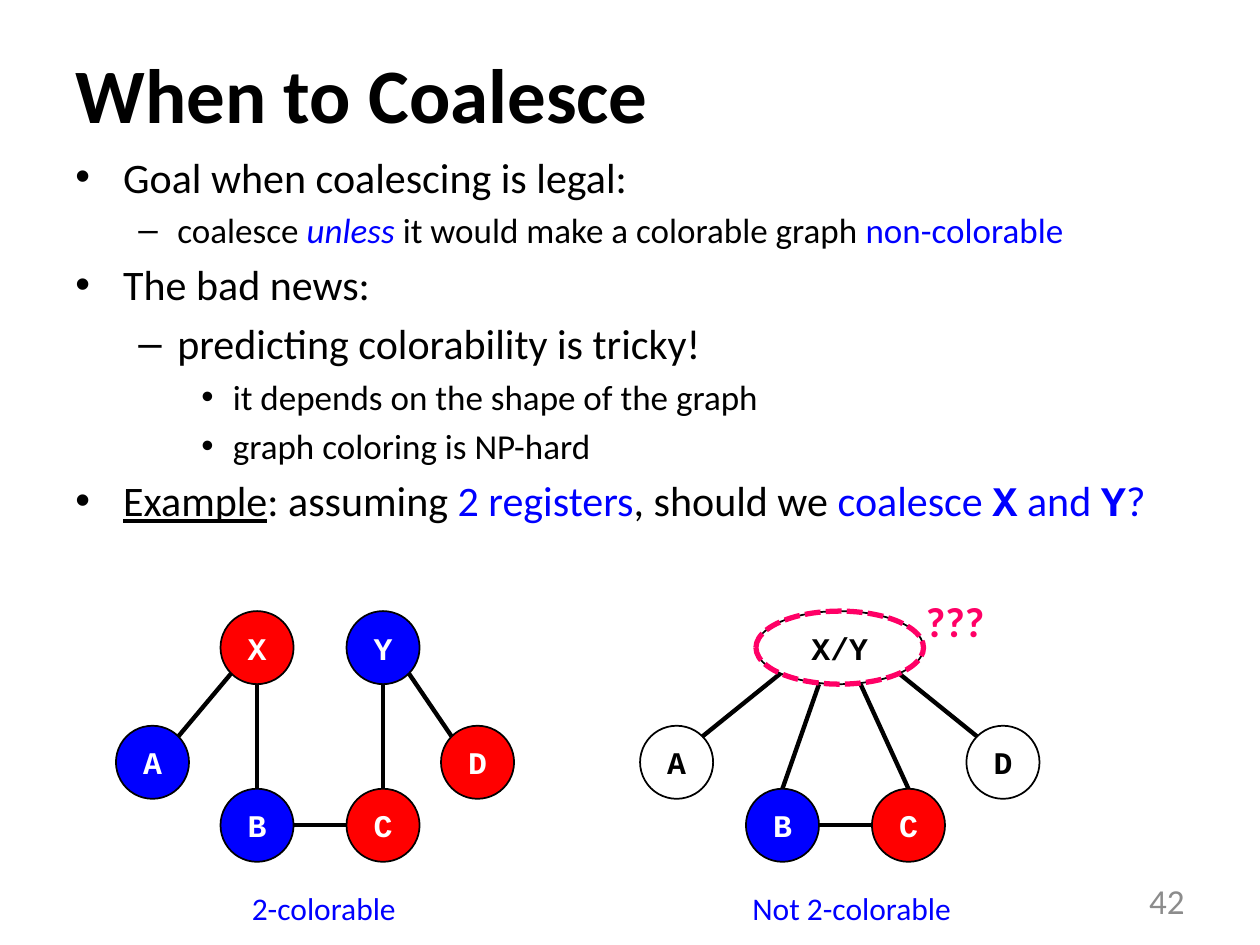
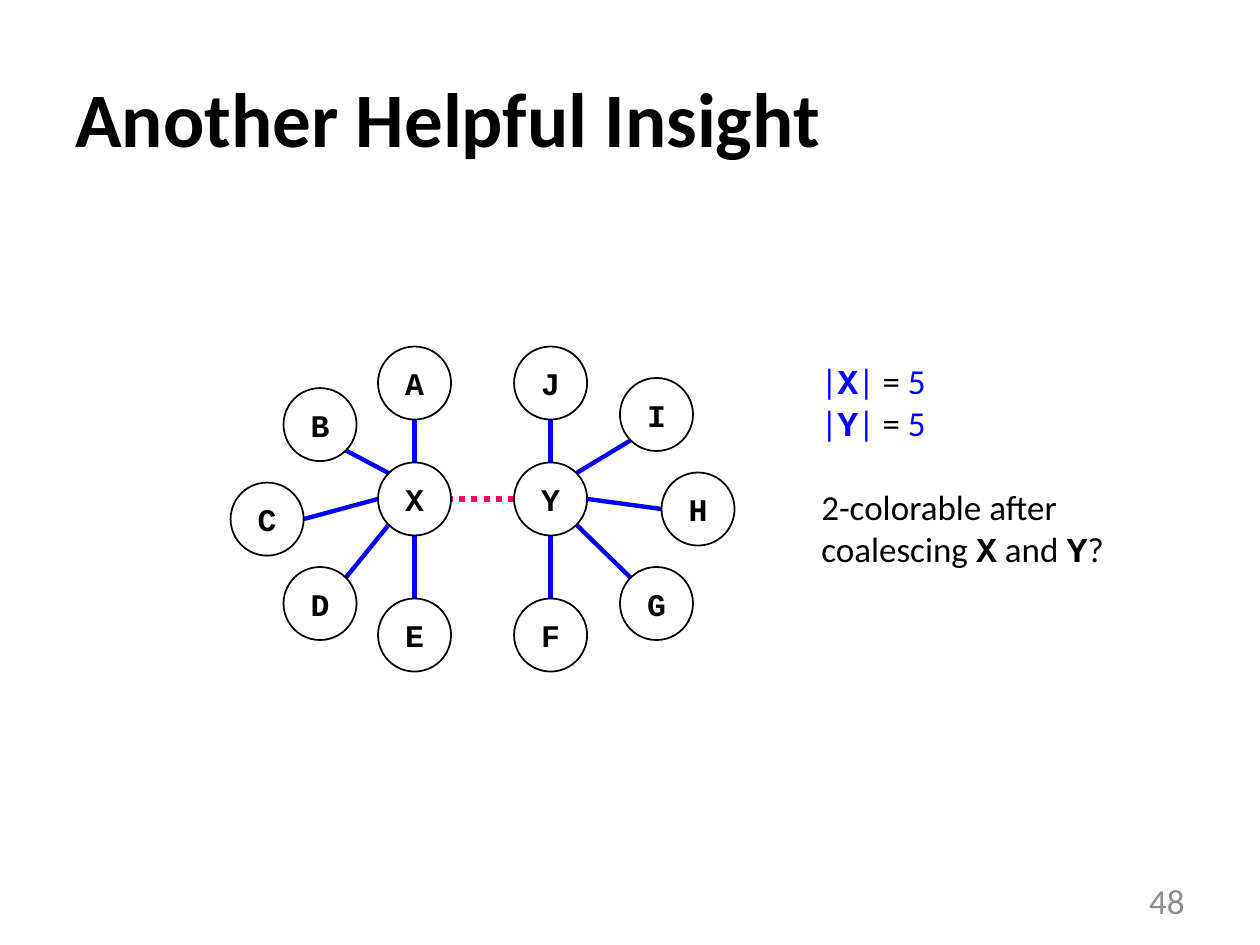
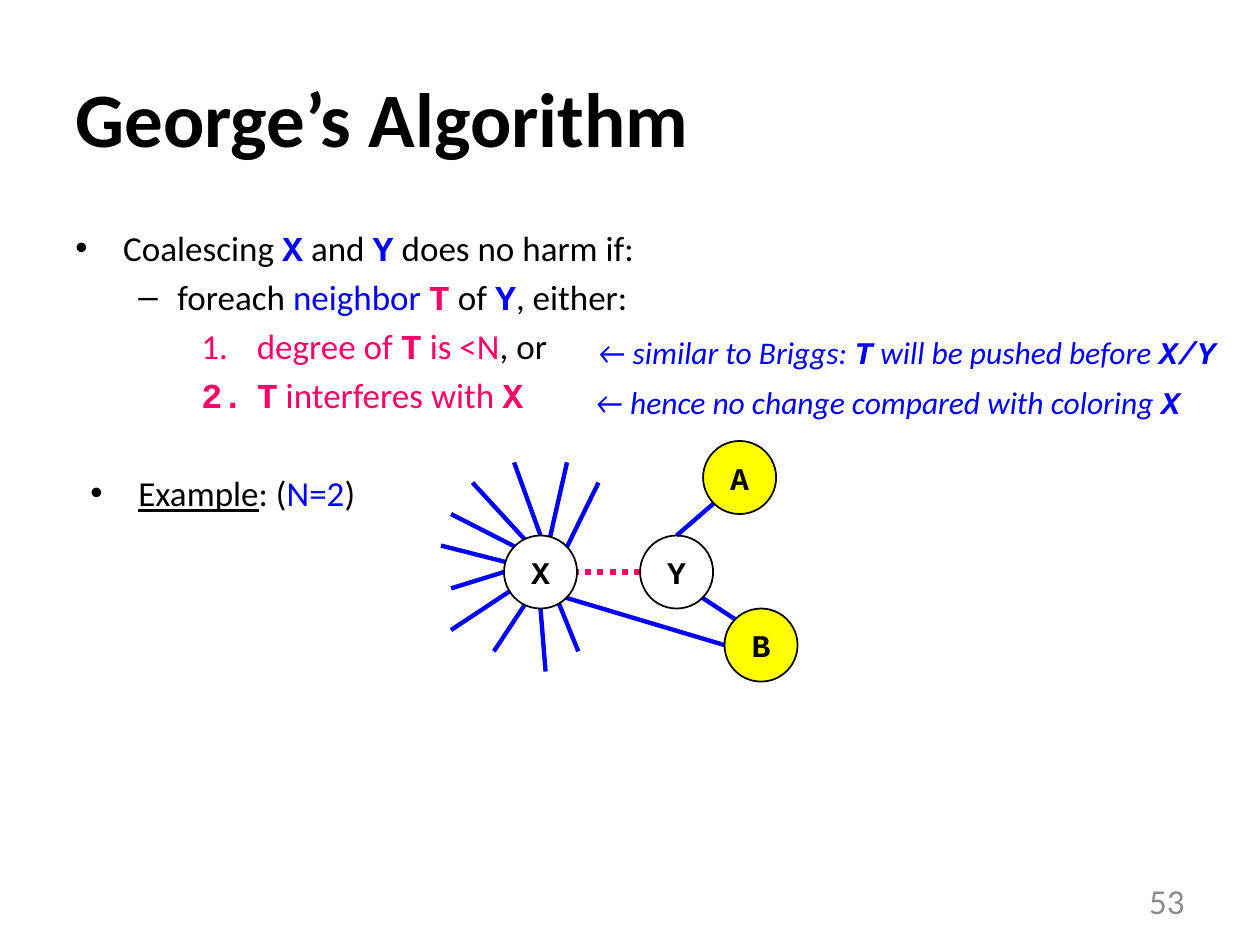
from typing import NamedTuple, Optional

from lxml.etree import SubElement
from pptx import Presentation
from pptx.dml.color import RGBColor
from pptx.enum.dml import MSO_LINE
from pptx.enum.shapes import MSO_CONNECTOR, MSO_SHAPE
from pptx.enum.text import MSO_ANCHOR, MSO_AUTO_SIZE, PP_ALIGN
from pptx.oxml.ns import qn
from pptx.slide import Slide
from pptx.util import Inches, Pt

BLACK = RGBColor(0x00, 0x00, 0x00)
WHITE = RGBColor(0xFF, 0xFF, 0xFF)
BLUE = RGBColor(0x00, 0x00, 0xFF)
RED = RGBColor(0xFF, 0x00, 0x00)
PINK = RGBColor(0xFF, 0x00, 0x66)
YELLOW = RGBColor(0xFF, 0xFF, 0x00)
GRAY = RGBColor(0x8C, 0x8C, 0x8C)
SANS = "Calibri"
MONO = "Courier New"
SIZE = 0.58
DIAG = 0.707
SITES = {
    "n": (0, -1), "s": (0, 1), "w": (-1, 0), "e": (1, 0),
    "nw": (-DIAG, -DIAG), "ne": (DIAG, -DIAG),
    "sw": (-DIAG, DIAG), "se": (DIAG, DIAG),
}
Point = tuple[float, float]


class Run(NamedTuple):
    text: str
    ink: RGBColor = BLACK
    style: str = ""
    font: str = SANS


class Mark(NamedTuple):
    level: int
    left: float
    hang: float
    sign: str


class Para(NamedTuple):
    runs: list[Run]
    size: int = 20
    mark: Optional[Mark] = None
    gap: float = 0
    align: PP_ALIGN = PP_ALIGN.LEFT


class Box(NamedTuple):
    left: float
    top: float
    width: float
    height: float
    wrap: bool = True
    anchor: MSO_ANCHOR = MSO_ANCHOR.TOP


class Node(NamedTuple):
    name: str
    left: float
    top: float
    fill: Optional[RGBColor] = None
    ink: RGBColor = BLACK
    width: float = SIZE

    def site(self, side: str) -> Point:
        across, down = SITES[side]
        half = self.width / 2
        return self.left + half * (1 + across), self.top + SIZE / 2 * (1 + down)


class Pen(NamedTuple):
    ink: RGBColor
    width: float
    dash: Optional[MSO_LINE] = None


DOT = Mark(0, 0.38, 0.38, "•")
DASH = Mark(1, 0.81, 0.31, "–")
SUB = Mark(2, 1.25, 0.25, "•")
STEP = Mark(2, 1.44, 0.44, "")
INSET = Mark(0, 0.5, 0.38, "•")
THIN = Pen(BLACK, 1)
EDGE = Pen(BLACK, 2.5)
LINK = Pen(BLUE, 2.5)
MOVE = Pen(PINK, 3.5, MSO_LINE.ROUND_DOT)
MERGE = Pen(PINK, 3, MSO_LINE.SQUARE_DOT)


def code(text: str, ink: RGBColor = BLACK, style: str = "b") -> Run:
    return Run(text, ink, style, MONO)


def item(mark: Mark, size: int, *runs: Run, gap: float = 0) -> Para:
    return Para(list(runs), size, mark, gap + size / 5)


def fill_frame(frame, paras: list[Para]) -> None:
    for num, para in enumerate(paras):
        line = frame.add_paragraph() if num else frame.paragraphs[0]
        line.alignment = para.align
        line.space_before = Pt(para.gap)
        for part in para.runs:
            run = line.add_run()
            run.text = part.text
            font = run.font
            font.name, font.size = part.font, Pt(para.size)
            font.color.rgb = part.ink
            font.bold = "b" in part.style
            font.italic = "i" in part.style
            font.underline = "u" in part.style
        if para.mark:
            mark = para.mark
            line.level = mark.level
            props = line._p.get_or_add_pPr()
            props.set("marL", str(Inches(mark.left)))
            props.set("indent", str(-Inches(mark.hang)))
            if mark.sign:
                SubElement(props, qn("a:buFont")).set("typeface", "Arial")
                SubElement(props, qn("a:buChar")).set("char", mark.sign)
            else:
                SubElement(props, qn("a:buAutoNum")).set("type", "arabicPeriod")


def add_text(slide: Slide, box: Box, *paras: Para) -> None:
    shape = slide.shapes.add_textbox(*map(Inches, box[:4]))
    frame = shape.text_frame
    frame.word_wrap = box.wrap
    frame.vertical_anchor = box.anchor
    if not box.wrap:
        frame.auto_size = MSO_AUTO_SIZE.SHAPE_TO_FIT_TEXT
    fill_frame(frame, list(paras))


def set_pen(line, pen: Pen) -> None:
    line.color.rgb = pen.ink
    line.width = Pt(pen.width)
    if pen.dash:
        line.dash_style = pen.dash


def add_line(slide: Slide, start: Point, end: Point, pen: Pen) -> None:
    line = slide.shapes.add_connector(
        MSO_CONNECTOR.STRAIGHT, *map(Inches, start + end))
    set_pen(line.line, pen)
    SubElement(line._element.spPr, qn("a:effectLst"))


def add_node(slide: Slide, node: Node, pen: Pen = THIN) -> None:
    shape = slide.shapes.add_shape(
        MSO_SHAPE.OVAL, *map(Inches, (node.left, node.top, node.width, SIZE)))
    shape.shadow.inherit = False
    if node.fill is None:
        shape.fill.background()
    else:
        shape.fill.solid()
        shape.fill.fore_color.rgb = node.fill
    set_pen(shape.line, pen)
    if node.name:
        frame = shape.text_frame
        frame.word_wrap = False
        frame.vertical_anchor = MSO_ANCHOR.MIDDLE
        fill_frame(frame, [Para([code(node.name, node.ink)], 18,
                                align=PP_ALIGN.CENTER)])


def add_graph(slide: Slide, nodes: list[Node], edges: list[str], pen: Pen,
              move: str = "") -> None:
    lookup = {node.name: node for node in nodes}
    pairs = [(edge, pen) for edge in edges]
    if move:
        pairs.append((move, MOVE))
    for edge, used in pairs:
        start, out, end, into = edge.split()
        add_line(slide, lookup[start].site(out), lookup[end].site(into), used)
    for node in nodes:
        add_node(slide, node)


def add_page(deck, title: str, number: int, top: float = 0.3) -> Slide:
    slide = deck.slides.add_slide(deck.slide_layouts[6])
    add_text(slide, Box(0.5, top, 9, 1.25, anchor=MSO_ANCHOR.MIDDLE),
             Para([Run(title, style="b")], 44))
    add_text(slide, Box(7.17, 6.95, 2.33, 0.4, anchor=MSO_ANCHOR.MIDDLE),
             Para([Run(str(number), GRAY)], align=PP_ALIGN.RIGHT))
    return slide


def add_label(slide: Slide, text: str, left: float, width: float) -> None:
    add_text(slide, Box(left, 7.01, width, 0.4, False),
             Para([Run(text, BLUE)], 18, align=PP_ALIGN.CENTER))


def draw_when(deck) -> None:
    slide = add_page(deck, "When to Coalesce", 42, 0.11)
    add_text(
        slide, Box(0.5, 1.15, 9.3, 3.86),
        item(DOT, 24, Run("Goal when coalescing is legal:")),
        item(DASH, 20, Run("coalesce "), Run("unless ", BLUE, "i"),
             Run("it would make a colorable graph "),
             Run("non-colorable", BLUE)),
        item(DOT, 24, Run("The bad news:")),
        item(DASH, 24, Run("predicting colorability is tricky!")),
        item(SUB, 20, Run("it depends on the shape of the graph")),
        item(SUB, 20, Run("graph coloring is NP-hard")),
        item(DOT, 24, Run("Example", style="u"), Run(": assuming "),
             Run("2 registers", BLUE), Run(", should we "),
             Run("coalesce ", BLUE), code("X", BLUE), Run(" and ", BLUE),
             code("Y", BLUE), Run("?", BLUE)),
    )
    high, mid, low = 4.85, 5.76, 6.26
    add_graph(
        slide,
        [Node("X", 1.75, high, RED, WHITE), Node("Y", 2.75, high, BLUE, WHITE),
         Node("A", 0.92, mid, BLUE, WHITE), Node("D", 3.5, mid, RED, WHITE),
         Node("B", 1.75, low, BLUE, WHITE), Node("C", 2.75, low, RED, WHITE)],
        ["X sw A ne", "X s B n", "Y s C n", "Y se D nw", "B e C w"], EDGE)
    add_label(slide, "2-colorable", 1.89, 1.36)

    both = Node("X/Y", 6, high, width=1.33)
    left = Node("B", 5.92, low, BLUE, WHITE)
    right = Node("C", 6.92, low, RED, WHITE)
    add_line(slide, (6.5, 5.43), left.site("n"), EDGE)
    add_line(slide, (6.83, 5.43), right.site("n"), EDGE)
    add_graph(
        slide,
        [both, Node("A", 5.08, mid), Node("D", 7.67, mid), left, right],
        ["X/Y sw A ne", "X/Y se D nw", "B e C w"], EDGE)
    add_label(slide, "Not 2-colorable", 5.86, 1.8)
    add_text(slide, Box(7.25, 4.68, 0.67, 0.5, False),
             Para([Run("???", PINK, "b")], 24))
    add_node(slide, both._replace(name=""), MERGE)


def draw_insight(deck) -> None:
    slide = add_page(deck, "Another Helpful Insight", 48)
    add_graph(
        slide,
        [Node("X", 3, 3.67), Node("Y", 4.08, 3.67),
         Node("A", 3, 2.75), Node("B", 2.25, 3.08), Node("C", 1.83, 3.83),
         Node("D", 2.25, 4.5), Node("E", 3, 4.75), Node("F", 4.08, 4.75),
         Node("G", 4.92, 4.5), Node("H", 5.25, 3.75), Node("I", 4.92, 3),
         Node("J", 4.08, 2.75)],
        ["A s X n", "B se X nw", "C e X w", "X sw D ne", "X s E n",
         "F n Y s", "G nw Y se", "H w Y e", "I sw Y ne", "J s Y n"],
        LINK, "Y w X e")
    counts = [
        Para([Run("|", BLUE), code(name, BLUE), Run("|", BLUE), Run(" = "),
              Run("5", BLUE)])
        for name in "XY"
    ]
    query = Para([Run("2-colorable after coalescing "), code("X"),
                  Run(" and "), code("Y"), Run("?")], gap=24)
    add_text(slide, Box(6.42, 2.8, 2.5, 2.12), *counts, query)


def draw_george(deck) -> None:
    slide = add_page(deck, "George’s Algorithm", 53)
    add_text(
        slide, Box(0.5, 1.75, 9, 4.95),
        item(DOT, 20, Run("Coalescing "), code("X", BLUE), Run(" and "),
             code("Y", BLUE), Run(" does no harm if:")),
        item(DASH, 20, Run("foreach "), Run("neighbor ", BLUE),
             code("T", PINK), Run(" of "), code("Y", BLUE),
             Run(", either:")),
        item(STEP, 20, Run("degree of ", PINK), code("T", PINK),
             Run(" is <N", PINK), Run(", or")),
        item(STEP, 20, code("T", PINK), Run(" interferes with ", PINK),
             code("X", PINK)),
        item(INSET, 20, Run("Example", style="u"), Run(": ("),
             Run("N=2", BLUE), Run(")"), gap=28),
    )
    stubs = [
        ((4.33, 4.42), (4.5, 3.67)), ((4.21, 4.33), (3.75, 3.83)),
        ((4.17, 4.5), (3.5, 4.33)), ((4.42, 4.75), (4.59, 5.17)),
        ((4.29, 4.83), (4.33, 5.33)), ((4.25, 4.67), (3.92, 5.17)),
        ((4, 4.54), (3.58, 4.67)), ((4.09, 4.34), (3.58, 4.08)),
        ((4.29, 4.25), (4.08, 3.67)), ((4.5, 4.34), (4.75, 3.83)),
        ((4.08, 4.67), (3.58, 5)),
    ]
    for start, end in stubs:
        add_line(slide, start, end, LINK)
    add_graph(
        slide,
        [Node("X", 4, 4.25, WHITE), Node("Y", 5.08, 4.25),
         Node("A", 5.58, 3.5, YELLOW), Node("B", 5.75, 4.83, YELLOW)],
        ["Y se B nw", "Y n A sw", "X se B w"], LINK, "Y w X e")
    add_text(slide, Box(4.64, 2.59, 5.22, 0.4, False),
             Para([Run("← similar to Briggs: ", BLUE, "i"),
                   code("T", BLUE, "bi"),
                   Run(" will be pushed before ", BLUE, "i"),
                   code("X/Y", BLUE, "bi")], 18))
    add_text(slide, Box(4.62, 2.99, 4.98, 0.4, False),
             Para([Run("← hence no change compared with coloring ", BLUE, "i"),
                   code("X", BLUE, "bi")], 18))


def main() -> None:
    deck = Presentation()
    deck.slide_width, deck.slide_height = Inches(10), Inches(7.5)
    draw_when(deck)
    draw_insight(deck)
    draw_george(deck)
    deck.save("out.pptx")


if __name__ == "__main__":
    main()
